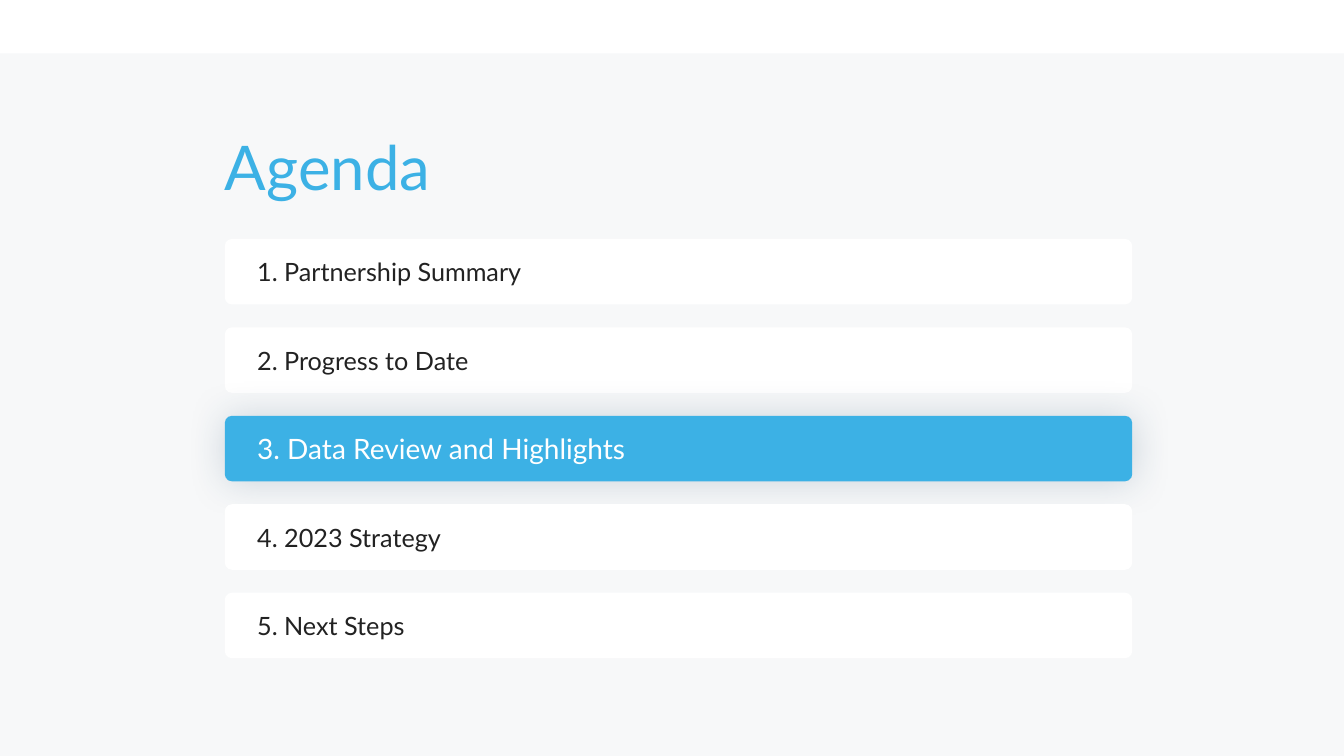
from dataclasses import dataclass

from lxml import etree
from pptx import Presentation
from pptx.dml.color import RGBColor
from pptx.enum.shapes import MSO_SHAPE
from pptx.enum.text import MSO_ANCHOR, PP_ALIGN
from pptx.oxml.ns import qn
from pptx.util import Inches, Pt

RECT = MSO_SHAPE.RECTANGLE
ROUNDED = MSO_SHAPE.ROUNDED_RECTANGLE
MIDDLE = MSO_ANCHOR.MIDDLE
LEFT = PP_ALIGN.LEFT


@dataclass(frozen=True)
class Theme:
    """Colours, font and type sizes of the slide."""
    font: str = "Lato"
    panel: str = "F7F8F9"
    card: str = "FFFFFF"
    accent: str = "3CB1E5"
    ink: str = "222222"
    on_accent: str = "FFFFFF"
    glow: str = "214868"
    title_size: int = 44
    item_size: int = 18
    current_size: int = 20


THEME = Theme()
TOPICS = ["Partnership Summary", "Progress to Date", "Data Review and Highlights",
          "2023 Strategy", "Next Steps"]
CURRENT = 3


def style_text(p, size, color):
    """Format every run of a paragraph."""
    for r in p.runs:
        r.font.name = THEME.font
        r.font.size = Pt(size)
        r.font.color.rgb = RGBColor.from_string(color)


def add_block(slide, shape_type, box, fill):
    """Add a plain filled shape in a box given in inches."""
    sp = slide.shapes.add_shape(shape_type, *map(Inches, box))
    sp.shadow.inherit = False
    sp.fill.solid()
    sp.fill.fore_color.rgb = RGBColor.from_string(fill)
    sp.line.fill.background()
    return sp


def add_glow(sp, color, blur=27, opacity=20):
    """Give a shape a soft shadow on all sides."""
    effects = sp._element.spPr.find(qn("a:effectLst"))
    shadow = etree.SubElement(effects, qn("a:outerShdw"), blurRad=str(Pt(blur)),
                              dist="0", dir="0", algn="ctr", rotWithShape="0")
    clr = etree.SubElement(shadow, qn("a:srgbClr"), val=color)
    etree.SubElement(clr, qn("a:alpha"), val=str(opacity * 1000))


def add_title(slide, box, text):
    """Add the slide title."""
    tf = slide.shapes.add_textbox(*map(Inches, box)).text_frame
    tf.word_wrap = True
    tf.margin_left = tf.margin_right = tf.margin_top = tf.margin_bottom = 0
    tf.text = text
    p = tf.paragraphs[0]
    p.line_spacing = 0.9
    style_text(p, THEME.title_size, THEME.accent)


def add_item(slide, box, text, current):
    """Add one agenda card, highlighted when it is the current topic."""
    sp = add_block(slide, ROUNDED, box, THEME.accent if current else THEME.card)
    sp.adjustments[0] = 0.11
    if current:
        add_glow(sp, THEME.glow)
    tf = sp.text_frame
    tf.word_wrap = True
    tf.vertical_anchor = MIDDLE
    tf.margin_left = Inches(0.3)
    tf.margin_right = tf.margin_top = tf.margin_bottom = Inches(0.07)
    tf.text = text
    p = tf.paragraphs[0]
    p.alignment = LEFT
    if current:
        style_text(p, THEME.current_size, THEME.on_accent)
    else:
        style_text(p, THEME.item_size, THEME.ink)


def add_agenda(slide, box, topics, current, card_height=0.65):
    """Spread numbered cards evenly over the height of the box."""
    left, top, width, height = box
    pitch = (height - card_height) / (len(topics) - 1)
    for i, topic in enumerate(topics):
        card = (left, top + i * pitch, width, card_height)
        add_item(slide, card, f"{i + 1}. {topic}", i + 1 == current)


def main():
    """Build and save the agenda slide."""
    prs = Presentation()
    prs.slide_width, prs.slide_height = Inches(13.33), Inches(7.5)
    slide = prs.slides.add_slide(prs.slide_layouts[6])
    add_block(slide, RECT, (0, 0.53, 13.33, 6.97), THEME.panel)
    add_agenda(slide, (2.23, 2.37, 9, 4.16), TOPICS, CURRENT)
    add_title(slide, (2.23, 1.36, 2.75, 0.84), "Agenda")
    prs.save("out.pptx")


if __name__ == "__main__":
    main()
